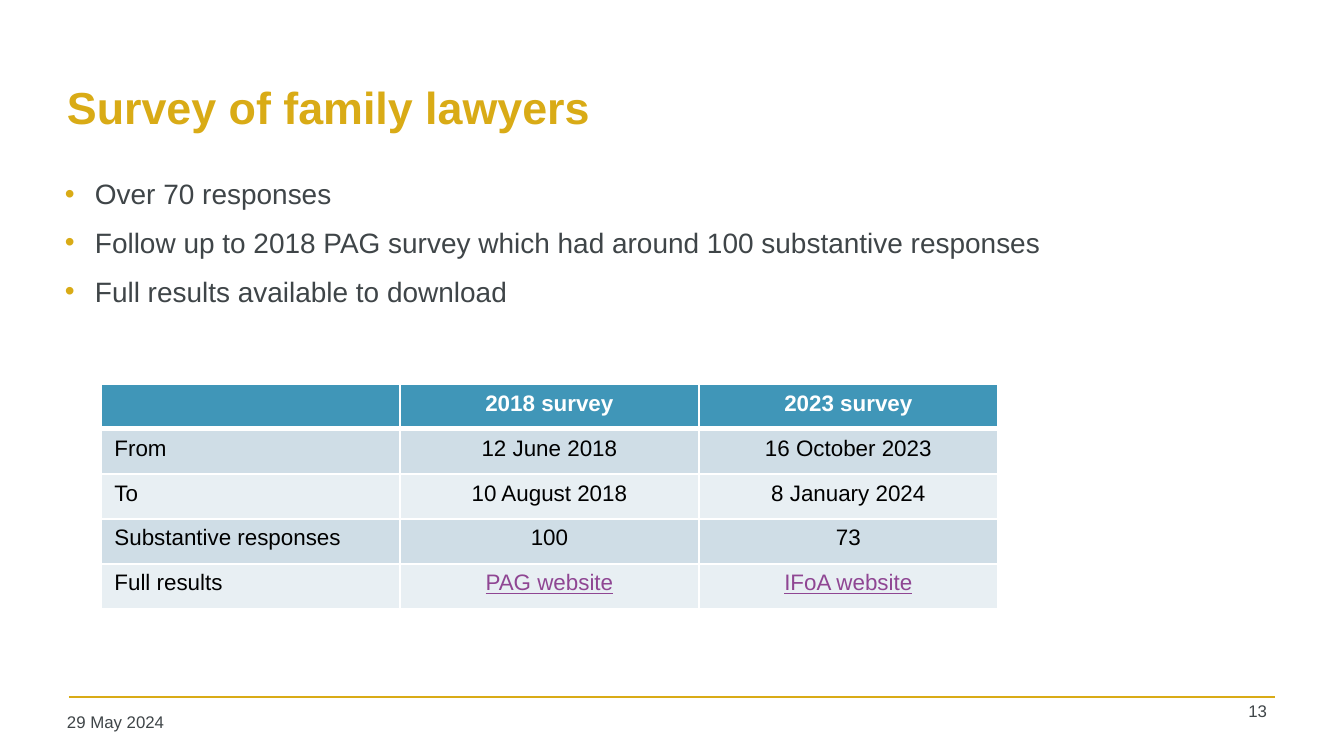
from dataclasses import dataclass

from lxml.etree import SubElement
from pptx import Presentation
from pptx.dml.color import RGBColor as Rgb
from pptx.enum.shapes import MSO_CONNECTOR as Conn
from pptx.enum.text import MSO_ANCHOR as Anchor, PP_ALIGN as Align
from pptx.oxml import parse_xml
from pptx.oxml.ns import nsdecls, qn
from pptx.util import Pt

SCALE = 914400 / 134.4  # EMU in one px
FONT = "Arial"
GOLD = Rgb(0xD9, 0xAB, 0x16)
GREY = Rgb(0x3F, 0x45, 0x48)
TEAL = Rgb(0x40, 0x96, 0xB8)
DARK = Rgb(0xCF, 0xDD, 0xE6)
PALE = Rgb(0xE8, 0xEF, 0xF3)
LINK = Rgb(0x8F, 0x46, 0x93)
WHITE = Rgb(0xFF, 0xFF, 0xFF)
BLACK = Rgb(0, 0, 0)


@dataclass
class Label:
    box: tuple[int, int, int, int]
    lines: list[str]
    size: int
    color: Rgb = GREY
    bold: bool = False
    bullet: bool = False
    align: Align = Align.LEFT
    anchor: Anchor = Anchor.TOP


LABELS = [
    Label((58, 44, 1219, 126), ["Survey of family lawyers"], 24, GOLD,
          bold=True, anchor=Anchor.MIDDLE),
    Label((56, 172, 1230, 190), [
        "Over 70 responses",
        "Follow up to 2018 PAG survey which had around 100 substantive responses",
        "Full results available to download",
    ], 15, bullet=True),
    Label((58, 707, 296, 36), ["29 May 2024"], 9),
    Label((1181, 696, 95, 38), ["13"], 9, align=Align.RIGHT),
]

ROWS = [
    ("", "2018 survey", "2023 survey"),
    ("From", "12 June 2018", "16 October 2023"),
    ("To", "10 August 2018", "8 January 2024"),
    ("Substantive responses", "100", "73"),
    ("Full results", "PAG website", "IFoA website"),
]
LEFT, TOP, COL, ROW = 101, 384, 299, 45


def px(n: int) -> int:
    return round(n * SCALE)


def style(para, size: int, color: Rgb, bold: bool = False) -> None:
    font = para.font
    font.name, font.size, font.bold = FONT, Pt(size), bold
    font.color.rgb = color


def add_bullet(para) -> None:
    props = para._p.get_or_add_pPr()
    props.set("marL", str(px(30)))
    props.set("indent", str(-px(30)))
    tint = SubElement(props, qn("a:buClr"))
    SubElement(tint, qn("a:srgbClr"), val=str(GOLD))
    SubElement(props, qn("a:buFont"), typeface=FONT)
    SubElement(props, qn("a:buChar"), char="•")


def add_label(slide, label: Label) -> None:
    frame = slide.shapes.add_textbox(*map(px, label.box)).text_frame
    frame.word_wrap = True
    frame.vertical_anchor = label.anchor
    frame.margin_left = frame.margin_right = px(9)
    frame.margin_top = frame.margin_bottom = px(5)
    for i, line in enumerate(label.lines):
        para = frame.add_paragraph() if i else frame.paragraphs[0]
        para.text = line
        para.alignment = label.align
        if i:
            para.space_before = Pt(8)
        if label.bullet:
            add_bullet(para)
        style(para, label.size, label.color, label.bold)


def add_rule(slide) -> None:
    rule = slide.shapes.add_connector(Conn.STRAIGHT, px(69), px(697), px(1275), px(697))
    rule.line.color.rgb = GOLD
    rule.line.width = Pt(1)
    SubElement(rule._element.spPr, qn("a:effectLst"))


def set_edges(cell, top: int, base: int) -> None:
    """Draw white cell borders; top and base widths are in points."""
    props = cell._tc.get_or_add_tcPr()
    widths = {"lnL": 1, "lnR": 1, "lnT": top, "lnB": base}
    for i, (side, width) in enumerate(widths.items()):
        props.insert(i, parse_xml(
            f'<a:{side} {nsdecls("a")} w="{Pt(width)}"><a:solidFill>'
            f'<a:srgbClr val="{WHITE}"/></a:solidFill></a:{side}>'))


def fill_cell(cell, text: str, row: int, col: int) -> None:
    head = row == 0
    link = row == len(ROWS) - 1 and col > 0
    cell.fill.solid()
    cell.fill.fore_color.rgb = TEAL if head else (DARK if row % 2 else PALE)
    set_edges(cell, 3 if row == 1 else 1, 3 if head else 1)
    cell.text = text
    para = cell.text_frame.paragraphs[0]
    para.alignment = Align.CENTER if col else Align.LEFT
    style(para, 12, WHITE if head else LINK if link else BLACK, head)
    if link:
        para.font.underline = True


def add_grid(slide) -> None:
    rows, cols = len(ROWS), len(ROWS[0])
    box = map(px, (LEFT, TOP, COL * cols, ROW * rows))
    table = slide.shapes.add_table(rows, cols, *box).table
    for r, texts in enumerate(ROWS):
        for c, text in enumerate(texts):
            fill_cell(table.cell(r, c), text, r, c)


def main() -> None:
    deck = Presentation()
    deck.slide_width, deck.slide_height = px(1344), px(756)
    slide = deck.slides.add_slide(deck.slide_layouts[6])
    add_rule(slide)
    for label in LABELS:
        add_label(slide, label)
    add_grid(slide)
    deck.save("out.pptx")


if __name__ == "__main__":
    main()
